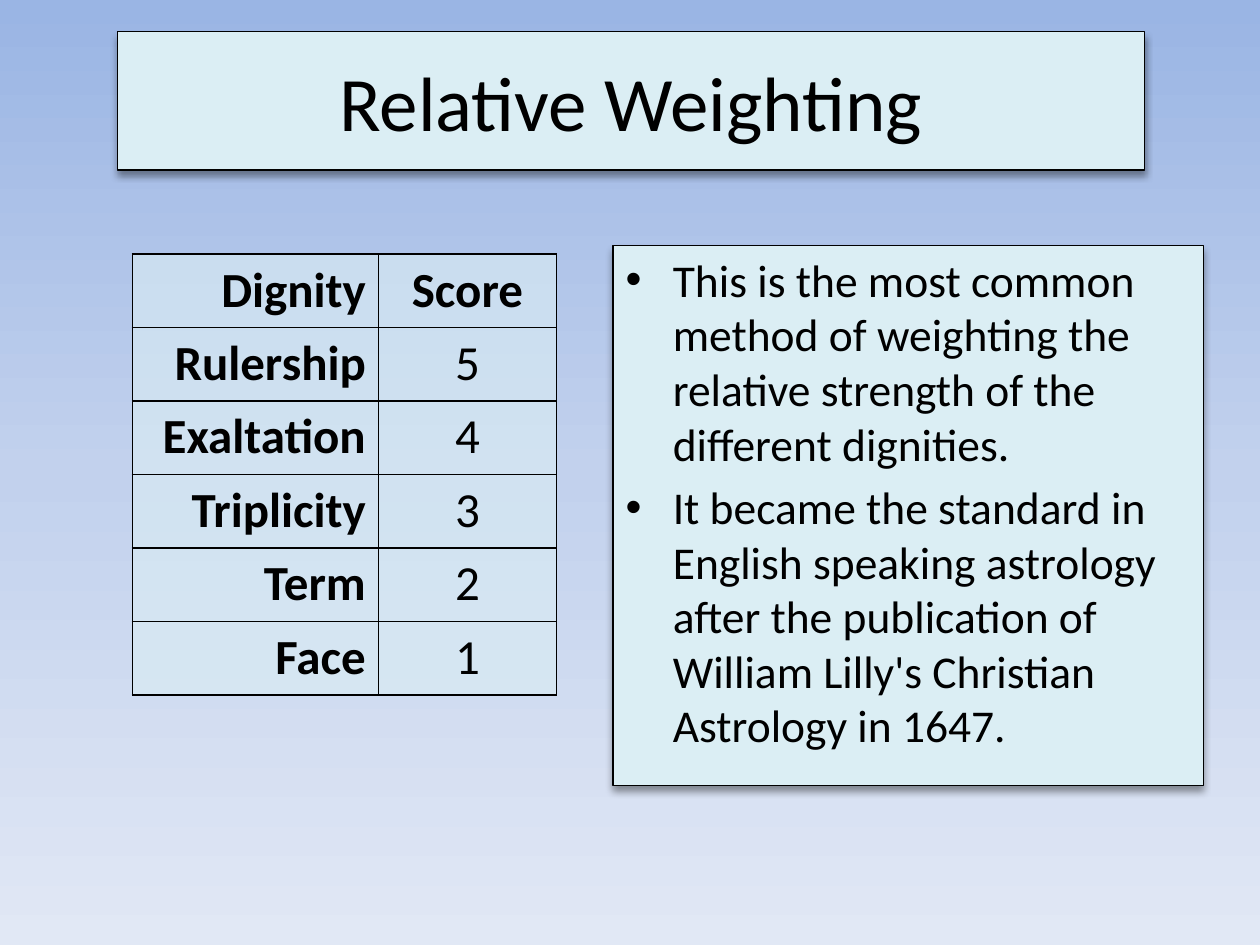
import pptx
import pptx.util
import pptx.dml.color
import pptx.enum.shapes
import pptx.enum.text
import pptx.oxml
import pptx.oxml.ns
from lxml import etree

Pt = pptx.util.Pt
qn = pptx.oxml.ns.qn
ALIGN = pptx.enum.text.PP_ALIGN
ANCHOR = pptx.enum.text.MSO_ANCHOR

PANEL = "DBEEF4"
BLACK = "000000"
SKY = [(0, "9AB5E4"), (50, "C2D1ED"), (100, "E1E8F5")]
SCORES = [("Dignity", "Score"), ("Rulership", "5"), ("Exaltation", "4"),
          ("Triplicity", "3"), ("Term", "2"), ("Face", "1")]
NOTES = [
    "This is the most common method of weighting the relative strength of the different dignities.",
    "It became the standard in English speaking astrology after the publication of "
    "William Lilly's Christian Astrology in 1647.",
]


def rgb(value):
    return pptx.dml.color.RGBColor.from_string(value)


def add_node(parent, tag, **attributes):
    node = etree.SubElement(parent, qn(tag))
    for name, value in attributes.items():
        node.set(name, str(value))
    return node


def write(para, text, size, bold=False, align=ALIGN.LEFT, bullet=False, before=0):
    if bullet:
        properties = para._p.get_or_add_pPr()
        properties.set("marL", str(Pt(27)))
        properties.set("indent", str(-Pt(27)))
        add_node(properties, "a:buFont", typeface="Arial")
        add_node(properties, "a:buChar", char="•")
    para.alignment = align
    para.space_before = Pt(before)
    span = para.add_run()
    span.text = text
    span.font.name = "Calibri"
    span.font.size = Pt(size)
    span.font.bold = bold
    span.font.color.rgb = rgb(BLACK)


def paint_background(page):
    fill = page.background.fill
    fill.gradient()
    fill.gradient_angle = 270
    stops = page._element.find(".//" + qn("a:gsLst"))
    for stop in list(stops):
        stops.remove(stop)
    for percent, color in SKY:
        stop = add_node(stops, "a:gs", pos=percent * 1000)
        add_node(stop, "a:srgbClr", val=color)


def add_panel(page, left, top, width, height, anchor):
    """Add an outlined, shadowed rectangle and return its text frame."""
    panel = page.shapes.add_shape(pptx.enum.shapes.MSO_SHAPE.RECTANGLE,
                                  Pt(left), Pt(top), Pt(width), Pt(height))
    panel.fill.solid()
    panel.fill.fore_color.rgb = rgb(PANEL)
    panel.line.color.rgb = rgb(BLACK)
    panel.line.width = Pt(0.75)
    panel.shadow.inherit = False
    effects = panel._element.spPr.find(qn("a:effectLst"))
    shadow = add_node(effects, "a:outerShdw", blurRad=Pt(4), dist=Pt(3),
                      dir=90 * 60000, rotWithShape=0)
    add_node(add_node(shadow, "a:srgbClr", val=BLACK), "a:alpha", val=40000)
    frame = panel.text_frame
    frame.word_wrap = True
    frame.vertical_anchor = anchor
    return frame


def add_title(page, left, top, width, height):
    frame = add_panel(page, left, top, width, height, ANCHOR.MIDDLE)
    write(frame.paragraphs[0], "Relative Weighting", 44, align=ALIGN.CENTER)


def add_notes(page, left, top, width, height):
    frame = add_panel(page, left, top, width, height, ANCHOR.TOP)
    for index, note in enumerate(NOTES):
        para = frame.add_paragraph() if index else frame.paragraphs[0]
        write(para, note, 26, bullet=True, before=5.2 if index else 0)


def style_cell(cell):
    """Give the cell black borders and a translucent fill."""
    properties = cell._tc.get_or_add_tcPr()
    for side in ("a:lnL", "a:lnR", "a:lnT", "a:lnB"):
        border = add_node(properties, side, w=Pt(1))
        add_node(add_node(border, "a:solidFill"), "a:srgbClr", val=BLACK)
    cell.fill.solid()
    cell.fill.fore_color.rgb = rgb(PANEL)
    color = properties.find(qn("a:solidFill")).find(qn("a:srgbClr"))
    add_node(color, "a:alpha", val=60000)


def add_scores(page, left, top, width, height):
    table = page.shapes.add_table(len(SCORES), 2, Pt(left), Pt(top),
                                  Pt(width), Pt(height)).table
    table.first_row = False
    table.horz_banding = False
    name_width = round(width * 0.58, 1)
    table.columns[0].width = Pt(name_width)
    table.columns[1].width = Pt(width - name_width)
    for row, texts in enumerate(SCORES):
        table.rows[row].height = Pt(height / len(SCORES))
        for column, text in enumerate(texts):
            cell = table.cell(row, column)
            style_cell(cell)
            write(cell.text_frame.paragraphs[0], text, 28,
                  bold=row == 0 or column == 0,
                  align=ALIGN.CENTER if column else ALIGN.RIGHT)


def main():
    deck = pptx.Presentation()
    deck.slide_width, deck.slide_height = Pt(720), Pt(540)
    page = deck.slides.add_slide(deck.slide_layouts[6])
    paint_background(page)
    add_title(page, 67, 18, 587, 79.2)
    add_scores(page, 75.6, 145.2, 242.4, 252)
    add_notes(page, 350.4, 140.4, 337.2, 308.4)
    deck.save("out.pptx")


if __name__ == "__main__":
    main()
